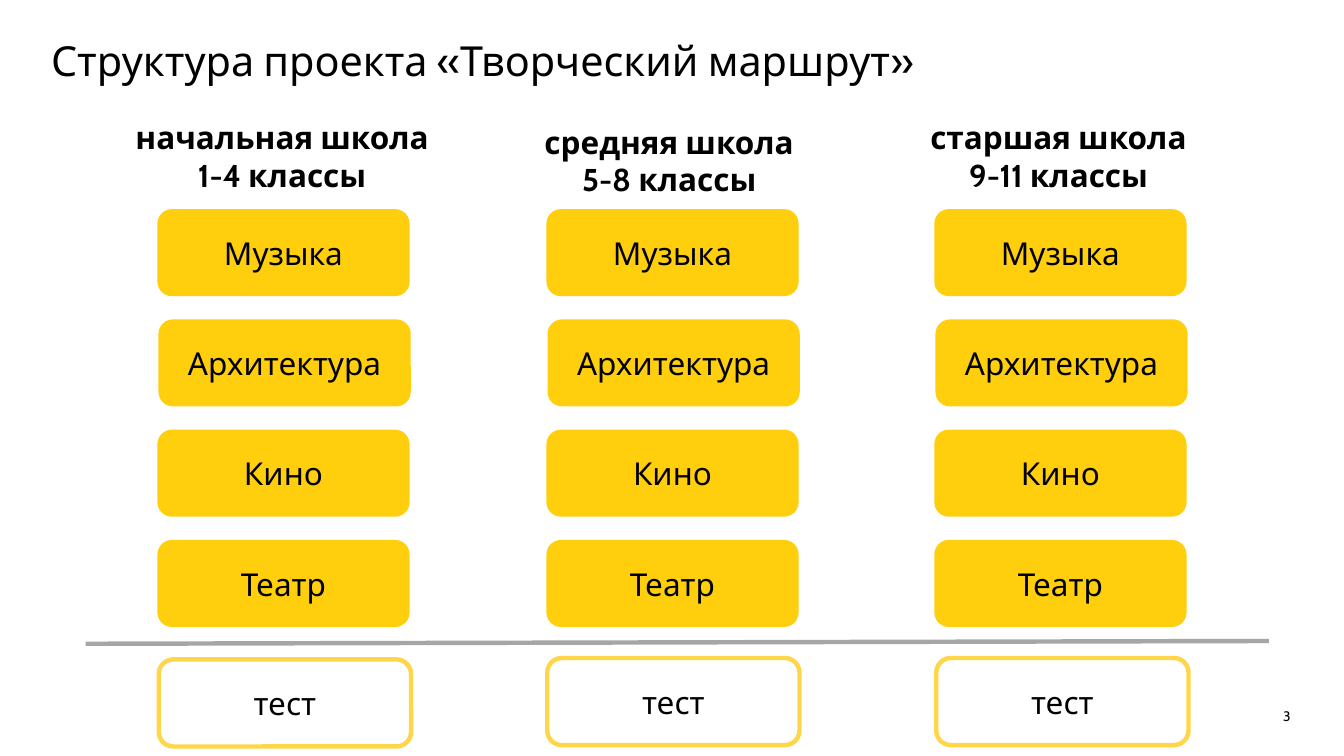
"""Build the slide showing the structure of a school project by level."""
from dataclasses import dataclass

import lxml.etree
import pptx
import pptx.dml.color
import pptx.enum.shapes
import pptx.enum.text
import pptx.oxml.ns
import pptx.util

Cm = pptx.util.Cm
Pt = pptx.util.Pt
ALIGN = pptx.enum.text.PP_ALIGN
ANCHOR = pptx.enum.text.MSO_ANCHOR
COLORS = {"text": "000000", "subject": "FFCC00", "test": "FFD649", "divider": "A6A6A6"}
FONT = "Cabin"
SUBJECTS = ["Музыка", "Архитектура", "Кино", "Театр"]
SUBJECT_TOP, SUBJECT_PITCH = 7.49, 3.95
CARD_W, CARD_H = 9.04, 3.12


@dataclass
class Level:
    name: str
    grades: str
    left: float
    heading_left: float
    heading_top: float
    test_left: float
    test_top: float


LEVELS = [
    Level("начальная школа", "1-4 классы", 5.64, 3.68, 4.22, 5.69, 23.62),
    Level("средняя школа", "5-8 классы", 19.58, 17.55, 4.39, 19.61, 23.57),
    Level("старшая школа", "9-11 классы", 33.48, 31.5, 4.22, 33.55, 23.57),
]


def rgb(name: str) -> pptx.dml.color.RGBColor:
    return pptx.dml.color.RGBColor.from_string(COLORS[name])


def write(sp, text: str, size: float = 32, bold: bool = False, align=ALIGN.CENTER,
          anchor=ANCHOR.TOP, spacing: float | None = None,
          insets: tuple[float, float, float, float] | None = None) -> None:
    tf = sp.text_frame
    tf.word_wrap = True
    tf.vertical_anchor = anchor
    if insets:
        tf.margin_left, tf.margin_top, tf.margin_right, tf.margin_bottom = map(Cm, insets)
    for i, line in enumerate(text.split("\n")):
        p = tf.paragraphs[0] if i == 0 else tf.add_paragraph()
        p.alignment = align
        if spacing:
            p.line_spacing = Pt(spacing)
        r = p.add_run()
        r.text = line
        r.font.name = FONT
        r.font.size = Pt(size)
        r.font.bold = bold
        r.font.color.rgb = rgb("text")


def add_text(slide, left: float, top: float, width: float, height: float,
             text: str, **fmt) -> None:
    sp = slide.shapes.add_textbox(Cm(left), Cm(top), Cm(width), Cm(height))
    write(sp, text, **fmt)


def add_card(slide, left: float, top: float, text: str, outlined: bool = False) -> None:
    sp = slide.shapes.add_shape(pptx.enum.shapes.MSO_SHAPE.ROUNDED_RECTANGLE,
                                Cm(left), Cm(top), Cm(CARD_W), Cm(CARD_H))
    sp.shadow.inherit = False
    if outlined:
        sp.fill.background()
        sp.line.color.rgb = rgb("test")
        sp.line.width = Pt(4.5)
    else:
        sp.fill.solid()
        sp.fill.fore_color.rgb = rgb("subject")
        color = sp.fill._xPr.find(".//" + pptx.oxml.ns.qn("a:srgbClr"))
        lxml.etree.SubElement(color, pptx.oxml.ns.qn("a:alpha"), val="95000")
        sp.line.fill.background()
    write(sp, text, anchor=ANCHOR.MIDDLE)


def add_divider(slide) -> None:
    line = slide.shapes.add_connector(pptx.enum.shapes.MSO_CONNECTOR.STRAIGHT,
                                      Cm(3.07), Cm(23.06), Cm(45.47), Cm(22.96))
    line.line.color.rgb = rgb("divider")
    line.line.width = Pt(4.5)
    lxml.etree.SubElement(line._element.spPr, pptx.oxml.ns.qn("a:effectLst"))


def add_level(slide, level: Level) -> None:
    add_text(slide, level.heading_left, level.heading_top, 13.06, 4.01,
             f"{level.name}\n{level.grades}", bold=True, insets=(0, 0, 0.2, 0))
    for row, subject in enumerate(SUBJECTS):
        nudge = 0.04 if subject == "Архитектура" else 0
        add_card(slide, level.left + nudge, SUBJECT_TOP + row * SUBJECT_PITCH, subject)
    add_card(slide, level.test_left, level.test_top, "тест", outlined=True)


def main() -> None:
    prs = pptx.Presentation()
    prs.slide_width, prs.slide_height = Cm(48.16), Cm(27.08)
    slide = prs.slides.add_slide(prs.slide_layouts[6])
    add_text(slide, 1.83, 0.84, 44.5, 2.79, "Структура проекта «Творческий маршрут»",
             size=42, align=ALIGN.LEFT, spacing=48, insets=(0, 0.51, 2, 0))
    for level in LEVELS:
        add_level(slide, level)
    add_divider(slide)
    add_text(slide, 43.48, 24.99, 2.87, 1.07, "3", size=14, align=ALIGN.RIGHT,
             anchor=ANCHOR.BOTTOM, spacing=18, insets=(0, 0, 0.1, 0.1))
    prs.save("out.pptx")


if __name__ == "__main__":
    main()
